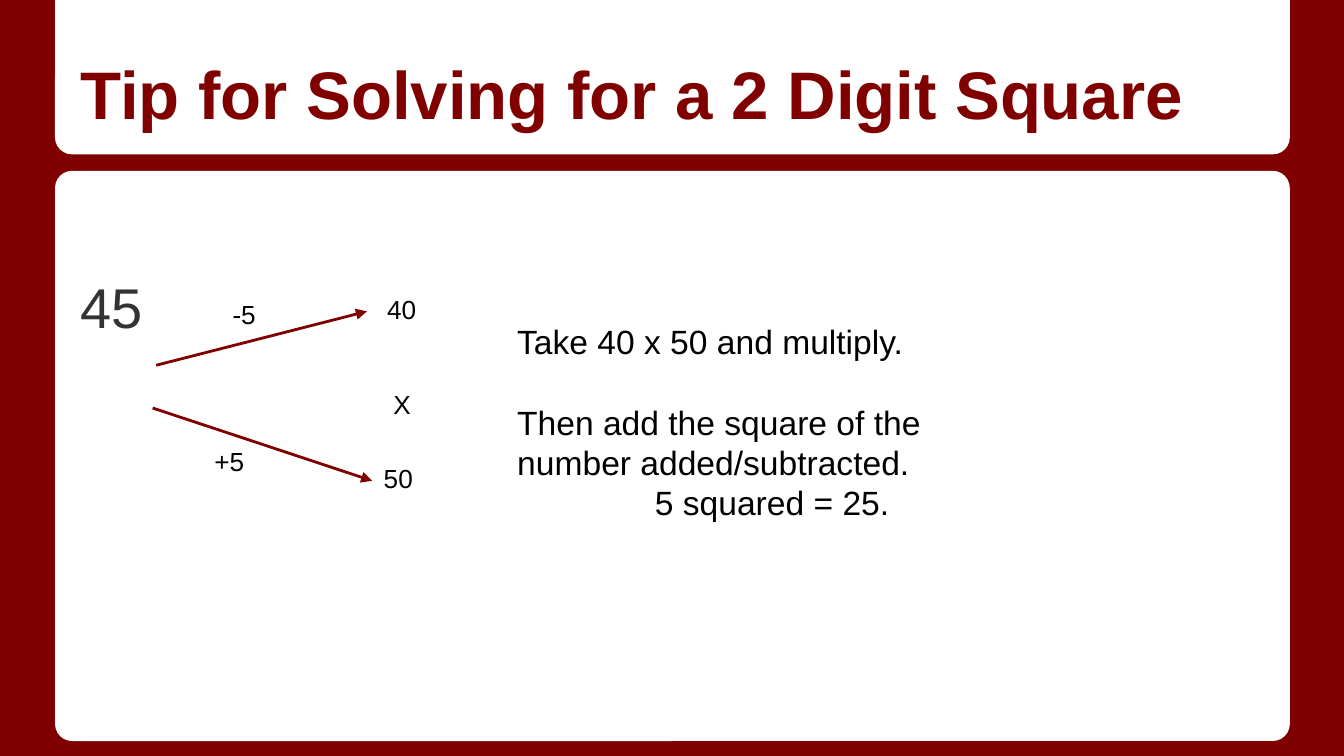
from lxml import etree
from pptx import Presentation
from pptx.dml.color import RGBColor
from pptx.enum.shapes import MSO_CONNECTOR, MSO_SHAPE
from pptx.enum.text import MSO_ANCHOR, PP_ALIGN
from pptx.oxml.ns import qn
from pptx.util import Pt

MAROON = RGBColor(0x80, 0x00, 0x00)
WHITE = RGBColor(0xFF, 0xFF, 0xFF)
GRAY = RGBColor(0x33, 0x33, 0x33)
BLACK = RGBColor(0x00, 0x00, 0x00)
FONT = "Arial"
INSET = 7.2

STRAIGHT = MSO_CONNECTOR.STRAIGHT
ROUNDED = MSO_SHAPE.ROUNDED_RECTANGLE
ROUNDED_PAIR = MSO_SHAPE.ROUND_2_SAME_RECTANGLE
TOP, BOTTOM = MSO_ANCHOR.TOP, MSO_ANCHOR.BOTTOM
CENTER = PP_ALIGN.CENTER


def add_card(slide, kind, top, height, adjustments):
    sp = slide.shapes.add_shape(kind, Pt(29.5), Pt(top), Pt(661.5), Pt(height))
    for i, value in enumerate(adjustments):
        sp.adjustments[i] = value
    sp.shadow.inherit = False
    sp.fill.solid()
    sp.fill.fore_color.rgb = WHITE
    sp.line.fill.background()


def add_text_box(slide, left, top, width, height, anchor=TOP, top_inset=INSET):
    """Return the text frame of a new, empty, wrapping text box."""
    tf = slide.shapes.add_textbox(Pt(left), Pt(top), Pt(width), Pt(height)).text_frame
    tf.word_wrap = True
    tf.vertical_anchor = anchor
    tf.margin_left = tf.margin_right = tf.margin_bottom = Pt(INSET)
    tf.margin_top = Pt(top_inset)
    return tf


def add_run(p, text, size, color=BLACK, bold=False):
    r = p.add_run()
    r.text = text
    r.font.name = FONT
    r.font.size = Pt(size)
    r.font.bold = bold
    r.font.color.rgb = color


def add_arrow(slide, x1, y1, x2, y2):
    line = slide.shapes.add_connector(STRAIGHT, Pt(x1), Pt(y1), Pt(x2), Pt(y2))
    line.line.color.rgb = MAROON
    line.line.width = Pt(1.5)
    etree.SubElement(line.line._get_or_add_ln(), qn("a:tailEnd"), type="triangle")
    etree.SubElement(line._element.spPr, qn("a:effectLst"))


def add_explanation(slide):
    tf = add_text_box(slide, 270, 164.9, 287.3, 130.3)
    p = tf.paragraphs[0]
    add_run(p, "Take 40 x 50 and multiply.", 18)
    p = tf.add_paragraph()
    p.space_before = Pt(21.5)
    add_run(p, "Then add the square of the number added/subtracted.", 18)
    p = tf.add_paragraph()
    p.alignment = CENTER
    add_run(p, "5 squared = 25.", 18)


def main():
    prs = Presentation()
    prs.slide_width, prs.slide_height = Pt(720), Pt(405)
    slide = prs.slides.add_slide(prs.slide_layouts[6])
    slide.background.fill.solid()
    slide.background.fill.fore_color.rgb = MAROON

    add_card(slide, ROUNDED, 91.5, 305.5, [0.03])
    add_card(slide, ROUNDED_PAIR, 0, 82.7, [0, 0.11])

    title = add_text_box(slide, 36, 10.8, 648, 67.7, anchor=BOTTOM)
    add_run(title.paragraphs[0], "Tip for Solving for a 2 Digit Square", 36, MAROON, True)

    body = add_text_box(slide, 36, 92.2, 648, 293, top_inset=79)
    add_run(body.paragraphs[0], "45", 30, GRAY)

    add_arrow(slide, 83.7, 195.7, 196.6, 166.8)
    add_arrow(slide, 81.8, 218.6, 199.4, 257.6)

    labels = [
        ("40", 200.3, 149.8, 64, 39),
        ("50", 198.5, 240.3, 61, 44.5),
        ("-5", 117.5, 152.4, 34.5, 34),
        ("+5", 107.8, 231.6, 36, 29),
        ("X", 203.6, 200.9, 46, 29),
    ]
    for text, *place in labels:
        add_run(add_text_box(slide, *place).paragraphs[0], text, 14)

    add_explanation(slide)
    prs.save("out.pptx")


if __name__ == "__main__":
    main()
